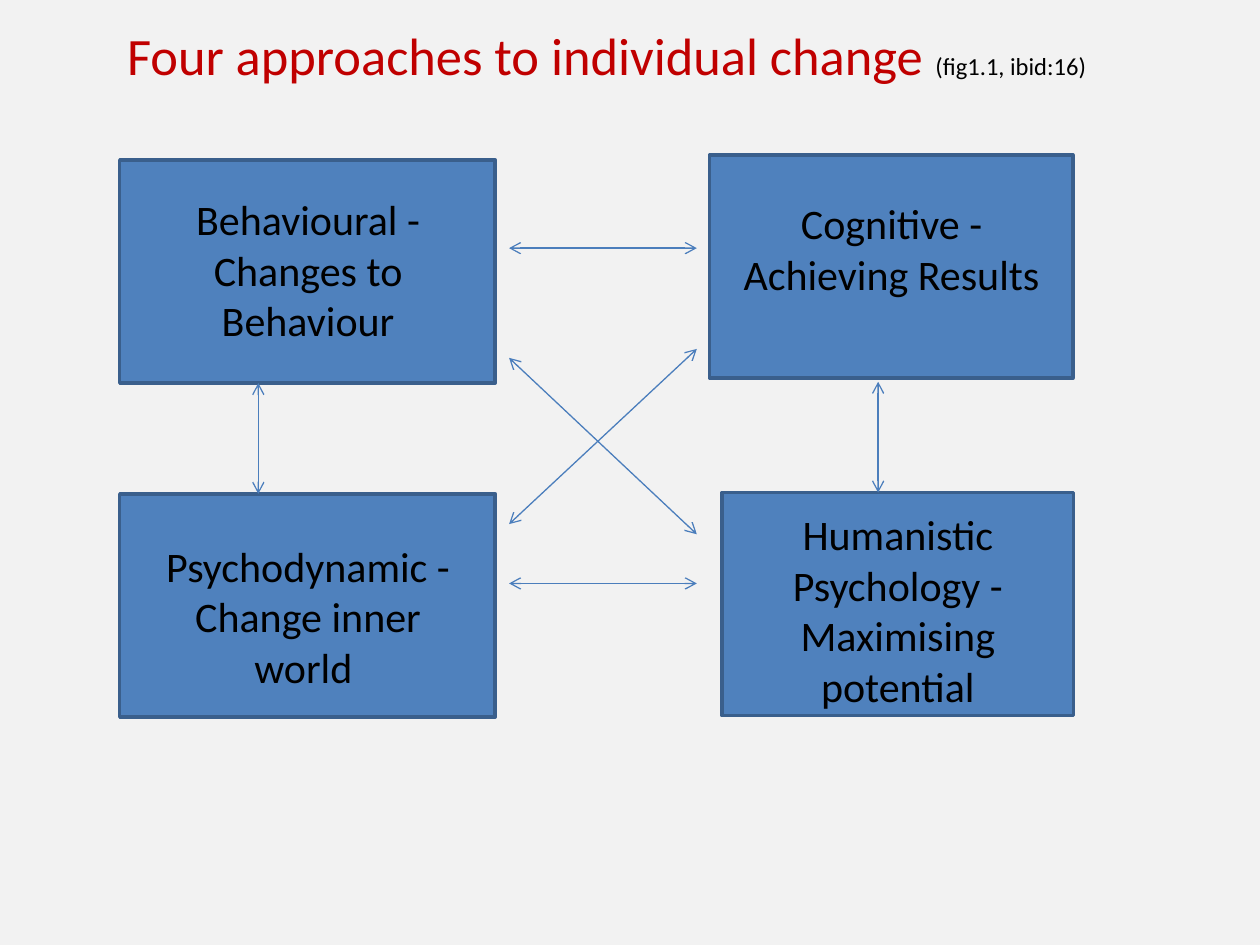
from lxml import etree
from pptx import Presentation
from pptx.dml.color import RGBColor
from pptx.enum.shapes import MSO_CONNECTOR, MSO_SHAPE
from pptx.enum.text import MSO_AUTO_SIZE, PP_ALIGN
from pptx.oxml.ns import qn
from pptx.util import Pt

RECT = MSO_SHAPE.RECTANGLE
STRAIGHT = MSO_CONNECTOR.STRAIGHT
GROW = MSO_AUTO_SIZE.SHAPE_TO_FIT_TEXT
LEFT, CENTER = PP_ALIGN.LEFT, PP_ALIGN.CENTER

PAPER = RGBColor(0xF2, 0xF2, 0xF2)
BLUE = RGBColor(0x4F, 0x81, 0xBD)
EDGE = RGBColor(0x3A, 0x5F, 0x8C)
ARROW = RGBColor(0x4B, 0x7E, 0xBC)
RED = RGBColor(0xC0, 0x00, 0x00)
BLACK = RGBColor(0, 0, 0)

FONT = "Calibri"
BOX_H = 127.5
GAP_L, GAP_R = 290.9, 398.2  # arrow ends between the two columns

TITLE = [("Four approaches to individual change ", 30, RED),
         ("(fig1.1, ibid:16)", 14, BLACK)]
TITLE_AT = (65.5, 9.4, 654.5, 43.9)

# box (left, top, width), label (left, top, width, height), lines
BOXES = [
    ((68.4, 91.4, 214.6), (82.8, 107.3, 186.5, 94.3),
     ["Behavioural -", "Changes to Behaviour"]),
    ((405.4, 88.6, 207.7), (412.6, 109.4, 193.7, 65.5),
     ["Cognitive -", "Achieving Results"]),
    ((68.4, 282.2, 214.6), (75.6, 305.3, 200.9, 94.3),
     ["Psychodynamic -", "Change inner world "]),
    ((412.6, 281.5, 200.9), (416.2, 287.3, 193.7, 123.8),
     ["Humanistic Psychology -", "Maximising potential"]),
]

# from x, from y, to x, to y
ARROWS = [
    (GAP_L, 204.5, GAP_R, 305.3),
    (GAP_R, 199.4, GAP_L, 299.5),
    (GAP_R, 141.8, GAP_L, 141.8),
    (147.6, 218.9, 147.6, 282.2),
    (501.8, 218.2, 501.8, 281.5),
    (GAP_R, 333.4, GAP_L, 333.4),
]


def pts(nums):
    return [Pt(n) for n in nums]


def add_box(slide, left, top, width):
    box = slide.shapes.add_shape(RECT, *pts((left, top, width, BOX_H)))
    box.shadow.inherit = False
    box.fill.solid()
    box.fill.fore_color.rgb = BLUE
    box.line.color.rgb = EDGE
    box.line.width = Pt(2)


def add_arrow(slide, ends):
    """Draw a thin line with an open arrowhead at both ends."""
    link = slide.shapes.add_connector(STRAIGHT, *pts(ends))
    link.line.color.rgb = ARROW
    link.line.width = Pt(0.75)
    line = link.line._get_or_add_ln()
    for tag in ("a:headEnd", "a:tailEnd"):
        etree.SubElement(line, qn(tag), type="arrow")
    etree.SubElement(link._element.spPr, qn("a:effectLst"))


def add_text(slide, place, paras, align):
    """Each paragraph is a list of (text, size, colour) runs."""
    frame = slide.shapes.add_textbox(*pts(place)).text_frame
    frame.word_wrap = True
    frame.auto_size = GROW
    frame.text = "\n" * (len(paras) - 1)
    for para, runs in zip(frame.paragraphs, paras):
        para.alignment = align
        for text, size, color in runs:
            run = para.add_run()
            run.text = text
            run.font.name = FONT
            run.font.size = Pt(size)
            run.font.color.rgb = color


def main():
    prs = Presentation()
    prs.slide_width, prs.slide_height = Pt(720), Pt(540)
    slide = prs.slides.add_slide(prs.slide_layouts[6])
    slide.background.fill.solid()
    slide.background.fill.fore_color.rgb = PAPER

    for box, _, _ in BOXES:
        add_box(slide, *box)
    for ends in ARROWS:
        add_arrow(slide, ends)
    for _, place, lines in BOXES:
        add_text(slide, place, [[(line, 24, BLACK)] for line in lines], CENTER)
    add_text(slide, TITLE_AT, [TITLE], LEFT)
    prs.save("out.pptx")


if __name__ == "__main__":
    main()
